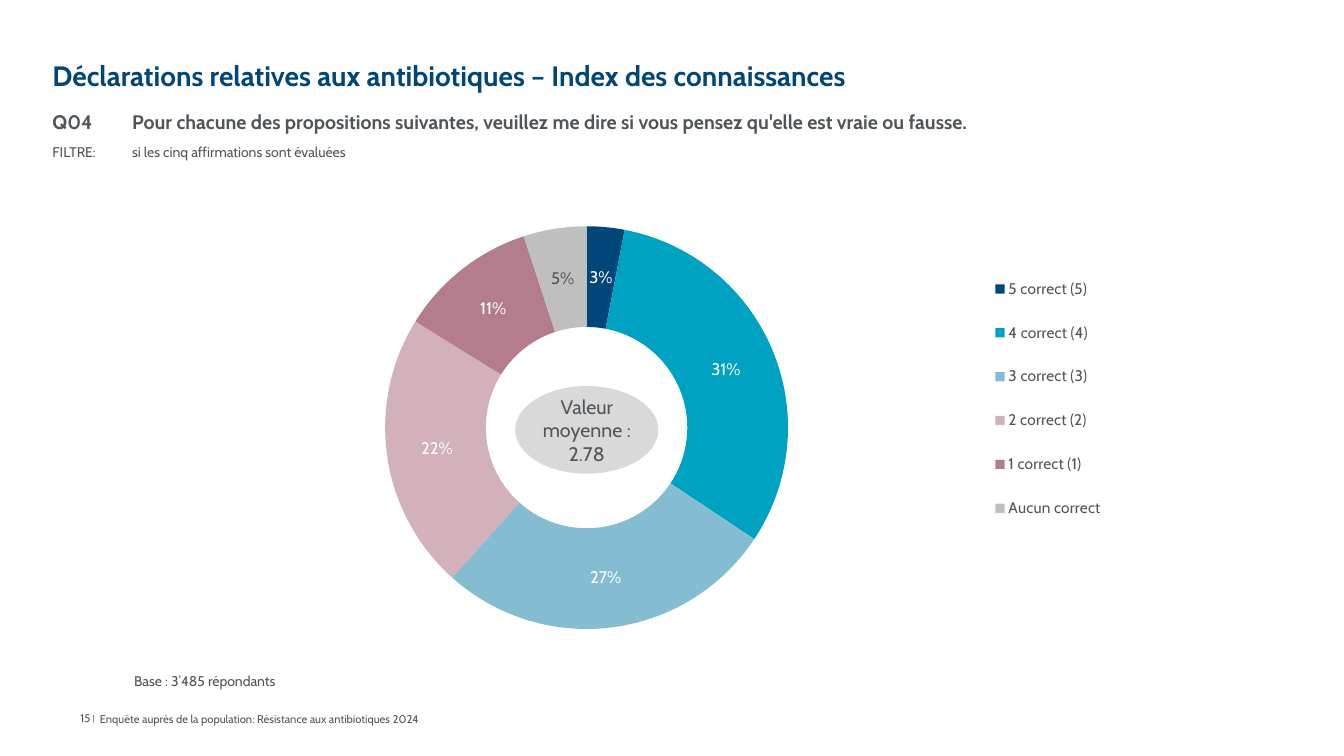
import pptx
import pptx.util
import pptx.chart.data
import pptx.dml.color
import pptx.enum.chart
import pptx.enum.shapes
import pptx.enum.text
import pptx.oxml

In, Pt = pptx.util.Inches, pptx.util.Pt
ALIGN, ANCHOR = pptx.enum.text.PP_ALIGN, pptx.enum.text.MSO_ANCHOR
FONT = "Cabin"
COLORS = {
    "navy": "004678", "teal": "00A2C2", "sky": "84BDD2", "rose": "D2B1BA",
    "plum": "B47D8C", "silver": "BFBFBF", "oval": "D9D9D9",
    "text": "50555A", "white": "FFFFFF",
}


def style(font, size, color="text", bold=False):
    font.name, font.size, font.bold = FONT, Pt(size), bold
    font.color.rgb = pptx.dml.color.RGBColor.from_string(COLORS[color])


def write(sp, text, size, color="text", bold=False, anchor=ANCHOR.TOP, align=ALIGN.LEFT):
    tf = sp.text_frame
    tf.text = text
    tf.word_wrap = True
    tf.auto_size = pptx.enum.text.MSO_AUTO_SIZE.NONE
    tf.vertical_anchor = anchor
    tf.margin_left = tf.margin_right = tf.margin_top = tf.margin_bottom = 0
    for p in tf.paragraphs:
        p.alignment = align
        p.space_before = Pt(0)
        for r in p.runs:
            style(r.font, size, color, bold)
    return tf


prs = pptx.Presentation()
prs.slide_width, prs.slide_height = In(13.33), In(7.5)
s = prs.slides.add_slide(prs.slide_layouts[1])
left = In(0.52)

# Title
title = s.shapes.title
title.left, title.top, title.width, title.height = left, In(0.29), In(10.79), In(0.63)
tf = write(title, "Déclarations relatives aux antibiotiques – Index des connaissances",
           20, "navy", True, ANCHOR.BOTTOM)
tf.paragraphs[0].line_spacing = 0.9

# Question and filter, with a hanging indent
body = s.placeholders[1]
body.left, body.top, body.width, body.height = left, In(1.07), In(12.44), In(0.47)
tf = write(body, "Q04\tPour chacune des propositions suivantes, veuillez me dire si vous "
           "pensez qu'elle est vraie ou fausse.\n"
           "FILTRE:\tsi les cinq affirmations sont évaluées", 14, bold=True)
for p in tf.paragraphs:
    p.line_spacing = 1.1
    pPr = p._p.get_or_add_pPr()
    pPr.set("marL", str(In(0.79)))
    pPr.set("indent", str(-In(0.79)))
    pPr.append(pptx.oxml.parse_xml(
        '<a:buNone xmlns:a="http://schemas.openxmlformats.org/drawingml/2006/main"/>'))
question, filtre = tf.paragraphs
filtre.space_before = Pt(6)
style(filtre.runs[0].font, 10)

# Doughnut chart
answers = [
    ("5 correct (5)", 0.03, "navy"), ("4 correct (4)", 0.31, "teal"),
    ("3 correct (3)", 0.27, "sky"), ("2 correct (2)", 0.22, "rose"),
    ("1 correct (1)", 0.11, "plum"), ("Aucun correct", 0.05, "silver"),
]
data = pptx.chart.data.CategoryChartData(number_format="0%")
data.categories = [name for name, share, color in answers]
data.add_series("Series 1", [share for name, share, color in answers])
chart = s.shapes.add_chart(pptx.enum.chart.XL_CHART_TYPE.DOUGHNUT,
                           In(1.31), In(1.92), In(11.5), In(4.33), data).chart
chart.has_title = False
style(chart.font, 14)
plot = chart.plots[0]
plot.vary_by_categories = True
plot._element.xpath("c:holeSize")[0].set("val", "70")

plot.has_data_labels = True
labels = plot.data_labels
labels.show_value, labels.show_percentage = True, False
labels.number_format, labels.number_format_is_linked = "0%", False
style(labels.font, 12)
for i, (name, share, color) in enumerate(answers):
    point = plot.series[0].points[i]
    point.format.fill.solid()
    point.format.fill.fore_color.rgb = pptx.dml.color.RGBColor.from_string(COLORS[color])
    point.format.line.fill.background()
    style(point.data_label.font, 12, "text" if color == "silver" else "white")

chart.has_legend = True
legend = chart.legend
legend.position = pptx.enum.chart.XL_LEGEND_POSITION.RIGHT
legend.include_in_layout = False
style(legend.font, 11)

# Fixed places of ring and legend, as shares of the chart
ring = chart._chartSpace.chart.plotArea
for part, target, (x, y, w, h) in [
        (ring, '<c:layoutTarget val="inner"/>', (0.218, 0.075, 0.348, 0.923)),
        (legend._element, "", (0.73, 0.14, 0.12, 0.66))]:
    for old in part.xpath("c:layout"):
        part.remove(old)
    layout = pptx.oxml.parse_xml(
        '<c:layout xmlns:c="http://schemas.openxmlformats.org/drawingml/2006/chart">'
        f'<c:manualLayout>{target}<c:xMode val="edge"/><c:yMode val="edge"/>'
        f'<c:x val="{x}"/><c:y val="{y}"/><c:w val="{w}"/><c:h val="{h}"/>'
        '</c:manualLayout></c:layout>')
    part.insert(0 if part is ring else 1, layout)

# Mean value in the middle of the ring
oval = s.shapes.add_shape(pptx.enum.shapes.MSO_SHAPE.OVAL,
                          In(5.11), In(3.83), In(1.42), In(0.87))
oval.shadow.inherit = False
oval.fill.solid()
oval.fill.fore_color.rgb = pptx.dml.color.RGBColor.from_string(COLORS["oval"])
oval.line.fill.background()
write(oval, "Valeur moyenne : 2.78", 14, anchor=ANCHOR.MIDDLE, align=ALIGN.CENTER)

# Base
base = s.shapes.add_textbox(In(1.33), In(6.66), In(7.44), In(0.16))
write(base, "Base : 3’485 répondants", 10).paragraphs[0].line_spacing = 1.1

# Footer: page number, raised bar, survey name
number = s.shapes.add_textbox(left, In(7.04), In(0.42), In(0.16))
tf = write(number, "15 ", 8, anchor=ANCHOR.BOTTOM, align=ALIGN.RIGHT)
bar = tf.paragraphs[0].add_run()
bar.text = "|"
style(bar.font, 10)
bar.font._element.set("baseline", "10000")
survey = s.shapes.add_textbox(In(0.99), In(7.04), In(7.81), In(0.16))
write(survey, "Enquête auprès de la population: Résistance aux antibiotiques 2024",
      8, anchor=ANCHOR.BOTTOM)

prs.save("out.pptx")
